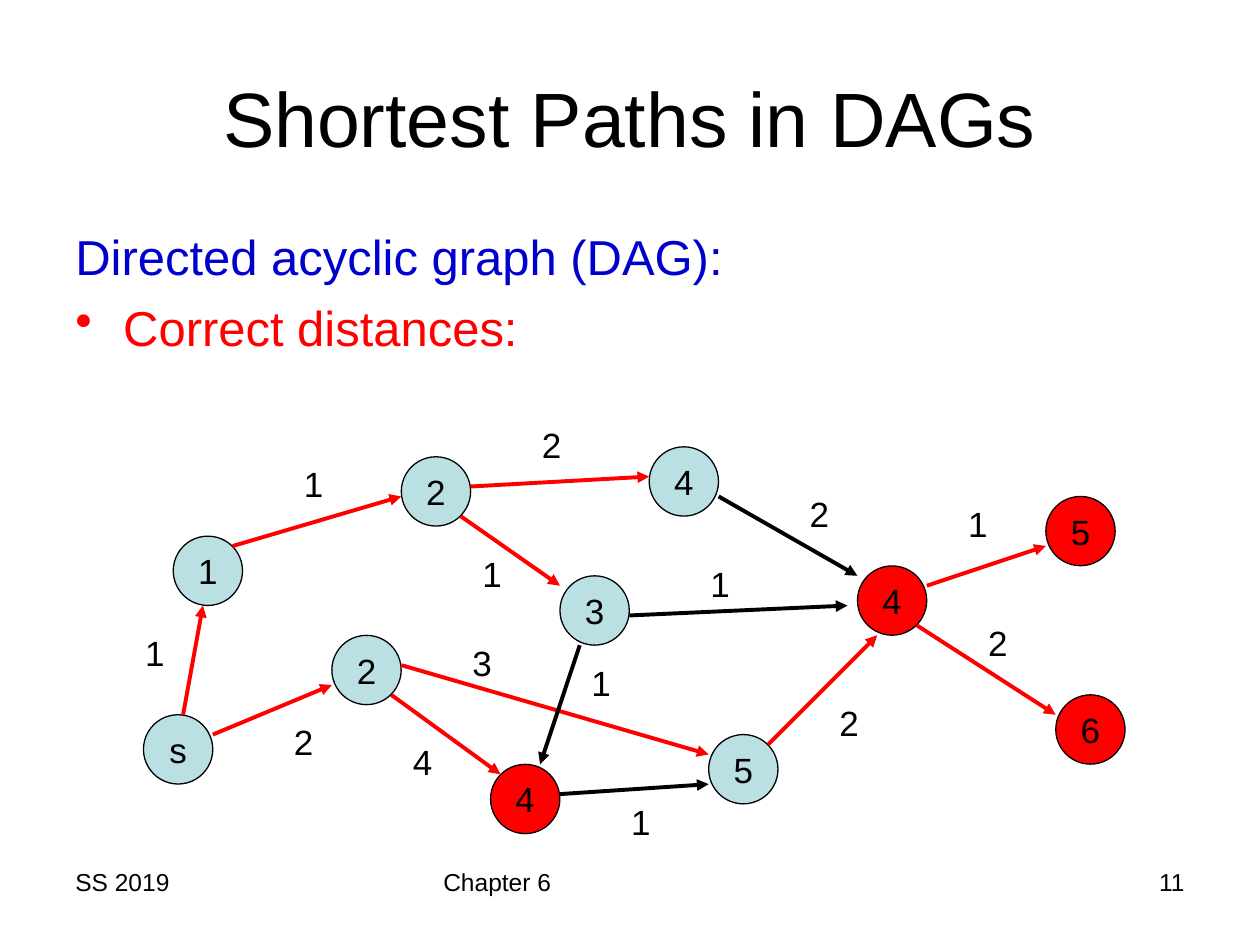
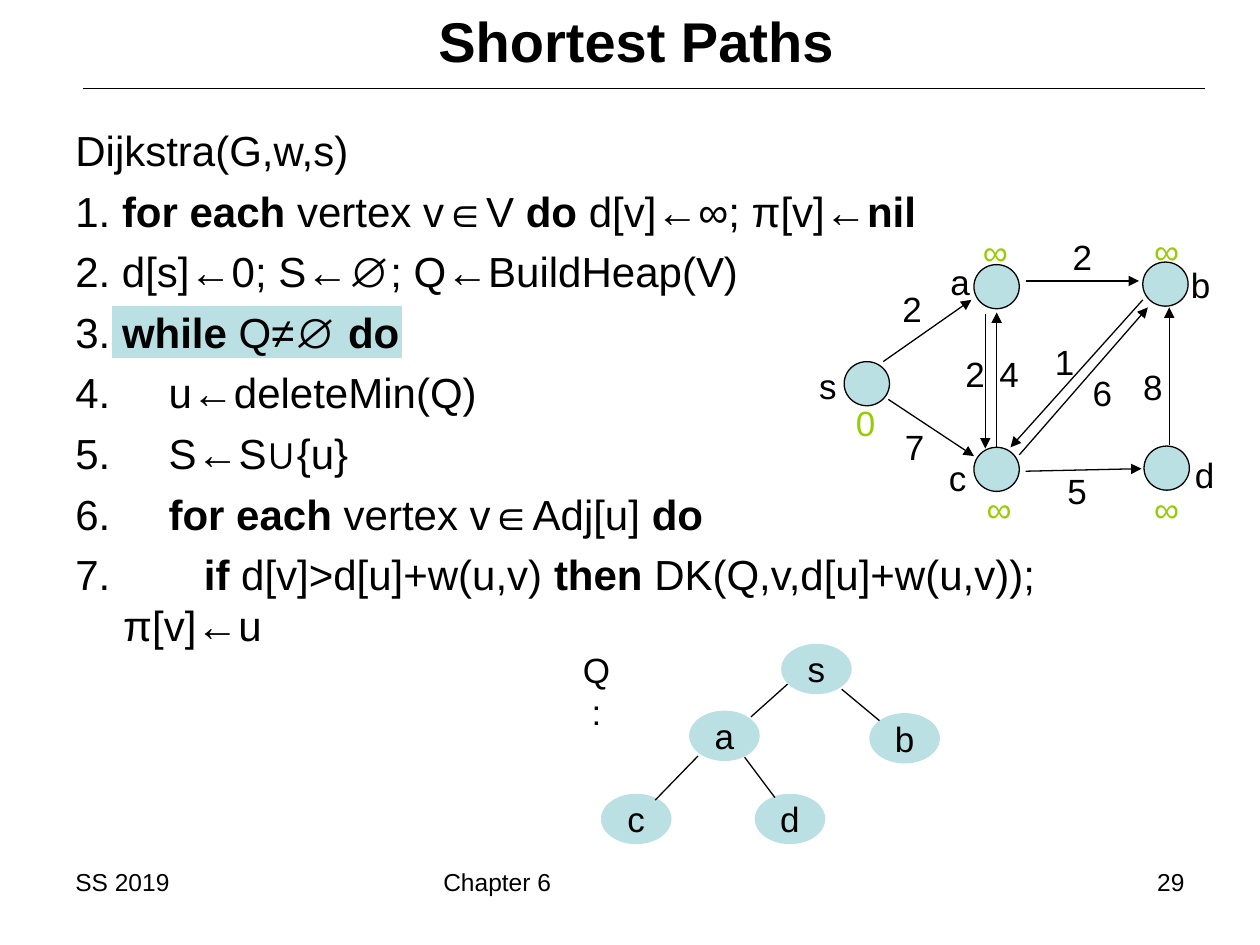
from collections import namedtuple

from lxml import etree
from pptx import Presentation
from pptx import util as u
from pptx.dml.color import RGBColor
from pptx.enum import shapes, text
from pptx.oxml import ns

INK = {
    "black": "000000",
    "blue": "0000CC",
    "red": "FF0000",
    "teal": "BBE0E3",
    "green": "99CC00",
}
WIDE, HIGH = 10, 7.5
LEFT, MID, RIGHT = text.PP_ALIGN.LEFT, text.PP_ALIGN.CENTER, text.PP_ALIGN.RIGHT
TOP, HALF = text.MSO_ANCHOR.TOP, text.MSO_ANCHOR.MIDDLE
OVAL, RECT = shapes.MSO_SHAPE.OVAL, shapes.MSO_SHAPE.RECTANGLE
HANG = 0.38
LABEL = (0.34, 0.4)


class Box(namedtuple("Box", "left top width height cols rows")):
    def spot(self, col, row):
        return (self.left + self.width * col / self.cols,
                self.top + self.height * row / self.rows)


PAGE = Box(0, 0, WIDE, HIGH, WIDE, HIGH)


def rgb(name):
    return RGBColor.from_string(INK[name])


def apply(thing, values):
    for name, value in values.items():
        setattr(thing, name, value)


def style(run, size, ink, bold):
    apply(run.font, {"name": "Arial", "size": u.Pt(size), "bold": bold})
    run.font.color.rgb = rgb(ink)


def write(frame, lines, size=20, ink="black", bold=False, align=MID,
          anchor=TOP, wrap=False, before=0):
    apply(frame, {"word_wrap": wrap, "vertical_anchor": anchor,
                  "auto_size": text.MSO_AUTO_SIZE.NONE})
    for i, line in enumerate(lines):
        para = frame.paragraphs[0] if i == 0 else frame.add_paragraph()
        apply(para, {"alignment": align, "space_before": u.Pt(before)})
        for j, part in enumerate(line.split("*")):
            if part:
                run = para.add_run()
                run.text = part
                style(run, size, ink, bold or j % 2 == 1)
    return frame.paragraphs


def note(slide, box, place, span, lines, **look):
    area = slide.shapes.add_textbox(*map(u.Inches, box.spot(*place) + span))
    return write(area.text_frame, lines, **look)


def form(slide, box, kind, place, span, fill="teal", edge="black", name=""):
    item = slide.shapes.add_shape(kind, *map(u.Inches, box.spot(*place) + span))
    item.shadow.inherit = False
    item.fill.solid()
    item.fill.fore_color.rgb = rgb(fill)
    if edge:
        item.line.color.rgb = rgb(edge)
        item.line.width = u.Pt(0.75)
    else:
        item.line.fill.background()
    if name:
        write(item.text_frame, [name], anchor=HALF)


def link(slide, box, start, end, ink="black", width=0.75, arrow=True):
    ends = map(u.Inches, box.spot(*start) + box.spot(*end))
    wire = slide.shapes.add_connector(shapes.MSO_CONNECTOR.STRAIGHT, *ends)
    wire.line.color.rgb = rgb(ink)
    wire.line.width = u.Pt(width)
    props = wire._element.spPr
    if arrow:
        etree.SubElement(props.find(ns.qn("a:ln")), ns.qn("a:tailEnd"),
                         type="triangle")
    etree.SubElement(props, ns.qn("a:effectLst"))


def indent(para, left, first, dot=None):
    props = para._p.get_or_add_pPr()
    props.set("marL", str(u.Inches(left)))
    props.set("indent", str(u.Inches(first)))
    if dot:
        etree.SubElement(props, ns.qn("a:buChar"), char=dot)


def foot(slide, page):
    for left, width, line, align in [(0.5, 2.33, "SS 2019", LEFT),
                                     (3.42, 3.17, "Chapter 6", LEFT),
                                     (7.17, 2.33, page, RIGHT)]:
        note(slide, PAGE, (left, 6.83), (width, 0.52), [line],
             size=14, align=align, wrap=True)


def title(slide, place, span, line, size, bold=False):
    note(slide, PAGE, place, span, [line], size=size, bold=bold,
         anchor=HALF, wrap=True)


def labels(slide, box, items, ink="black"):
    for name, *place in items:
        note(slide, box, place, LABEL, [name], ink=ink)


def dag(slide, box):
    nodes = {
        "teal": [("s", 1, 30), ("1", 4, 12), ("2", 20, 22), ("3", 43, 16),
                 ("5", 58, 32), ("2", 27, 4), ("4", 52, 3)],
        "red": [("4", 36, 35), ("4", 73, 15), ("5", 92, 8), ("6", 93, 28)],
    }
    edges = {
        "red": [((5, 30), (7, 19)), ((8, 32), (20, 27)), ((10, 13), (27, 8)),
                ((26, 28), (37, 36)), ((27, 25), (58, 34)), ((33, 10), (43, 17)),
                ((34, 7), (52, 6)), ((64, 33), (75, 22)), ((80, 17), (92, 13)),
                ((79, 21), (93, 30))],
        "black": [((43, 38), (58, 37)), ((50, 20), (72, 19)),
                  ((59, 8), (73, 16)), ((45, 23), (41, 35))],
    }
    costs = [("1", 0, 21), ("2", 15, 30), ("1", 16, 4), ("4", 27, 32),
             ("3", 33, 22), ("2", 40, 0), ("1", 34, 13), ("1", 57, 14),
             ("2", 67, 7), ("1", 49, 38), ("2", 70, 28), ("1", 83, 8),
             ("2", 85, 20), ("1", 45, 24)]
    for fill, items in nodes.items():
        for name, *place in items:
            form(slide, box, OVAL, place, (0.55, 0.55), fill, name=name)
    for ink, pairs in edges.items():
        for start, end in pairs:
            link(slide, box, start, end, ink, 2.25)
    labels(slide, box, costs)


def graph(slide, box):
    nodes = [(30, 110), (133, 33), (267, 31), (268, 177), (133, 178)]
    edges = [((61, 110), (131, 61)), ((65, 140), (133, 185)),
             ((151, 178), (151, 71)), ((174, 46), (264, 46)),
             ((267, 61), (162, 178)), ((169, 184), (271, 67)),
             ((174, 197), (266, 195)), ((288, 176), (288, 67)),
             ((142, 72), (142, 179))]
    costs = [("2", 67, 46), ("1", 188, 88), ("7", 69, 156), ("8", 258, 108),
             ("2", 202, 5), ("4", 144, 98), ("5", 198, 191), ("6", 218, 113),
             ("2", 117, 98)]
    names = [("s", 0, 107), ("a", 105, 25), ("b", 296, 27), ("c", 103, 180),
             ("d", 299, 178)]
    dists = [("0", 30, 137), ("∞", 136, 205), ("∞", 269, 205), ("∞", 269, 0),
             ("∞", 133, 1)]
    for place in nodes:
        form(slide, box, OVAL, place, (0.36, 0.35))
    for start, end in edges:
        link(slide, box, start, end)
    labels(slide, box, costs + names)
    labels(slide, box, dists, "green")


def heap(slide, box):
    nodes = [("s", 170, 1), ("a", 97, 54), ("b", 240, 56), ("c", 27, 120),
             ("d", 149, 120)]
    edges = [((104, 90), (70, 125)), ((141, 91), (165, 123)),
             ((175, 33), (146, 59)), ((218, 37), (248, 62))]
    for name, *place in nodes:
        form(slide, box, OVAL, place, (0.56, 0.4), edge=None, name=name)
    for start, end in edges:
        link(slide, box, start, end, arrow=False)
    note(slide, box, (0, 0), (0.47, 0.4), ["Q:"], wrap=True)


def code(slide, box):
    form(slide, box, RECT, (0.39, 1.49), (2.3, 0.41), edge=None)
    steps = [
        (HANG, "Dijkstra(G,w,s)"),
        (HANG, "1. *for each* vertex v∈V *do* d[v]←∞; π[v]←*nil*"),
        (HANG, "2. d[s]←0; S←∅; Q←BuildHeap(V)"),
        (HANG, "3.* while* Q≠∅ *do*"),
        (0.74, "4.\tu←deleteMin(Q)"),
        (0.74, "5.\tS←S∪{u}"),
        (0.74, "6.\t*for each* vertex v∈Adj[u] *do*"),
        (1.02, "7.\t*if* d[v]>d[u]+w(u,v) *then* DK(Q,v,d[u]+w(u,v));"),
        (HANG, "π[v]←u"),
    ]
    paras = note(slide, box, (0, 0), (box.width, box.height),
                 [line for _, line in steps],
                 size=24, align=LEFT, wrap=True, before=5.8)
    for para, (left, _) in zip(paras, steps):
        indent(para, left, -left)
    indent(paras[-1], HANG, 0)
    paras[-1].space_before = u.Pt(0)


def theme(slide):
    title(slide, (0.5, 0.3), (9, 1.25), "Shortest Paths in DAGs", 44)
    _, point = note(slide, PAGE, (0.5, 1.75), (9, 4.95),
                    ["Directed acyclic graph (DAG):", "Correct distances:"],
                    size=28, ink="blue", align=LEFT, wrap=True, before=6.9)
    point.runs[0].font.color.rgb = rgb("red")
    indent(point, HANG, -HANG, "•")
    foot(slide, "11")
    dag(slide, Box(1.06, 3.31, 7.87, 3.15, 100, 40))


def search(slide):
    title(slide, (0.55, 0), (9, 0.63), "Shortest Paths", 32, True)
    link(slide, PAGE, (0.66, 0.7), (9.56, 0.7), arrow=False)
    code(slide, Box(0.5, 0.94, 9, 5.62, 9, 5.62))
    graph(slide, Box(6.4, 1.77, 3.4, 2.5, 340, 250))
    heap(slide, Box(4.5, 5.1, 3, 1.6, 300, 160))
    foot(slide, "29")


def main():
    deck = Presentation()
    apply(deck, {"slide_width": u.Inches(WIDE), "slide_height": u.Inches(HIGH)})
    for build in (theme, search):
        build(deck.slides.add_slide(deck.slide_layouts[6]))
    deck.save("out.pptx")


if __name__ == "__main__":
    main()
